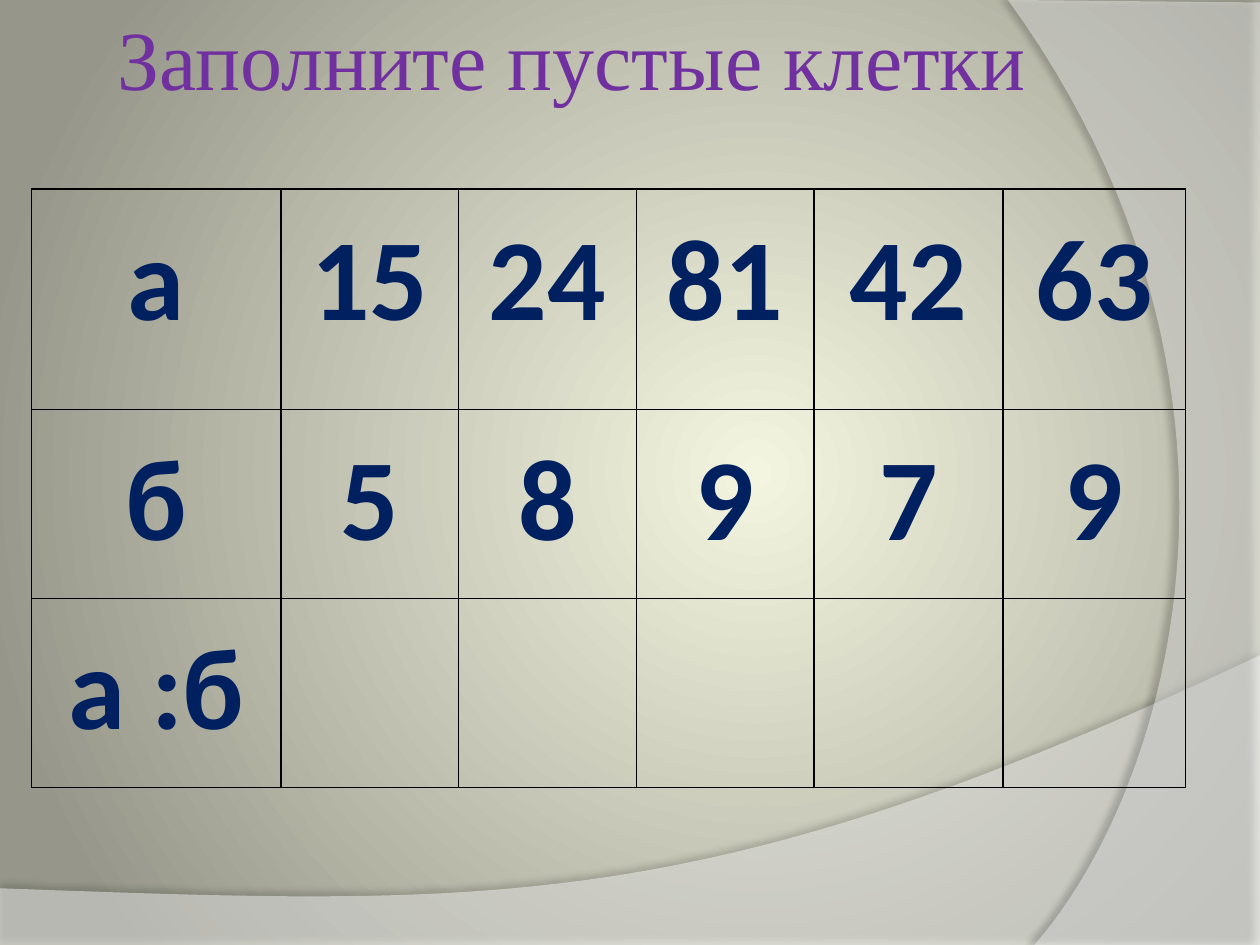
from dataclasses import dataclass

from lxml.etree import SubElement
from pptx import Presentation
from pptx.dml.color import RGBColor
from pptx.enum.text import MSO_ANCHOR, PP_ALIGN
from pptx.oxml.ns import qn
from pptx.util import Inches, Pt

# Lengths on the page are counted in grid units: 100 columns by 75 rows.
COLUMNS, ROWS = 100, 75
UNIT = Inches(10) / COLUMNS


def grid(*lengths):
    return [round(length * UNIT) for length in lengths]


def bezier(start, first, second, end, steps=48):
    """Return the points after start along a cubic curve."""
    points = []
    for step in range(1, steps + 1):
        t = step / steps
        weights = ((1 - t) ** 3, 3 * t * (1 - t) ** 2, 3 * t**2 * (1 - t), t**3)
        corners = (start, first, second, end)
        points.append(tuple(sum(w * corner[axis] for w, corner in zip(weights, corners))
                            for axis in (0, 1)))
    return points


def add_xml(parent, tag, **values):
    return SubElement(parent, qn(tag), {key: str(value) for key, value in values.items()})


def apply(target, formats):
    for name, value in formats.items():
        setattr(target, name, value)


@dataclass(frozen=True)
class Theme:
    glow: str = "F4F5E0"
    edge: str = "96978A"
    wave: str = "FFFFFF"
    ink: str = "000000"
    title: str = "7030A0"
    number: str = "002060"
    title_font: str = "Times New Roman"
    number_font: str = "Calibri"
    title_size: int = 48
    number_size: int = 66
    border: int = 1


class Page:
    """The style and the slide being filled."""

    def __init__(self, deck, theme):
        self.theme = theme
        self.slide = deck.slides.add_slide(deck.slide_layouts[5])

    def background(self):
        fill = self.slide.background.fill
        fill.gradient()
        stops = zip(fill.gradient_stops, (self.theme.glow, self.theme.edge), (0, 1))
        for stop, colour, position in stops:
            stop.color.rgb = RGBColor.from_string(colour)
            stop.position = position
        gradient = self.slide.element.find(".//" + qn("a:gradFill"))
        gradient.remove(gradient.find(qn("a:lin")))
        circle = add_xml(gradient, "a:path", path="circle")
        add_xml(circle, "a:fillToRect", l=60000, t=50000, r=40000, b=50000)

    def wave(self, points, opacity, shadow_opacity, distance, angle):
        start, *others = [grid(*point) for point in points]
        builder = self.slide.shapes.build_freeform(*start)
        builder.add_line_segments(others)
        shape = builder.convert_to_shape()
        shape.fill.solid()
        shape.fill.fore_color.rgb = RGBColor.from_string(self.theme.wave)
        shape.line.fill.background()
        shape.shadow.inherit = False
        properties = shape.element.spPr
        colour = properties.find(qn("a:solidFill")).find(qn("a:srgbClr"))
        add_xml(colour, "a:alpha", val=opacity * 1000)
        shadow = add_xml(properties.find(qn("a:effectLst")), "a:outerShdw", blurRad=Pt(4),
                         dist=Pt(distance), dir=angle * 60000, algn="ctr", rotWithShape=0)
        shadow_colour = add_xml(shadow, "a:srgbClr", val=self.theme.ink)
        add_xml(shadow_colour, "a:alpha", val=shadow_opacity * 1000)

    def add_text(self, frame, text, alignment, spacing, colour, **font):
        para = frame.paragraphs[0]
        apply(para, {"alignment": alignment, "line_spacing": spacing})
        span = para.add_run()
        span.text = text
        apply(span.font, font)
        span.font.color.rgb = RGBColor.from_string(colour)

    def title(self, text, *place):
        box = self.slide.shapes.title
        apply(box, dict(zip(("left", "top", "width", "height"), grid(*place))))
        apply(box.text_frame, {"vertical_anchor": MSO_ANCHOR.MIDDLE, "word_wrap": True})
        self.add_text(box.text_frame, text, PP_ALIGN.LEFT, 1.0, self.theme.title,
                      name=self.theme.title_font, size=Pt(self.theme.title_size))
        box.element.getparent().append(box.element)  # in front of the waves

    def border(self, cell):
        properties = cell._tc.get_or_add_tcPr()
        for side in ("a:lnL", "a:lnR", "a:lnT", "a:lnB"):
            line = add_xml(properties, side, w=Pt(self.theme.border))
            add_xml(add_xml(line, "a:solidFill"), "a:srgbClr", val=self.theme.ink)

    def table(self, values, left, top, widths, heights):
        place = grid(left, top, sum(widths), sum(heights))
        table = self.slide.shapes.add_table(len(heights), len(widths), *place).table
        apply(table, {"first_row": False, "horz_banding": False})
        for column, width in zip(table.columns, grid(*widths)):
            column.width = width
        for row, height, texts in zip(table.rows, grid(*heights), values):
            row.height = height
            for cell, text in zip(row.cells, texts):
                self.border(cell)
                cell.fill.background()
                apply(cell, {"margin_left": Inches(0.05), "margin_right": Inches(0.05),
                             "margin_top": 0, "margin_bottom": 0})
                if text:
                    self.add_text(cell.text_frame, text, PP_ALIGN.CENTER, 1.15,
                                  self.theme.number, name=self.theme.number_font,
                                  size=Pt(self.theme.number_size), bold=True)


def main():
    deck = Presentation()
    apply(deck, {"slide_width": grid(COLUMNS)[0], "slide_height": grid(ROWS)[0]})
    page = Page(deck, Theme())
    page.background()

    bottom_curve = bezier((100, 52), (55.9, 72.9), (39.1, 71.9), (0, 70.5))
    page.wave([(0, 70.5), (0, 75.1), (100, 75.1), (100, 52), *bottom_curve],
              opacity=45, shadow_opacity=35, distance=3.5, angle=270)
    right_curve = bezier((82.1, 75), (93.5, 61.9), (101.8, 30), (80, 0))
    page.wave([(100, 0.2), (100, 75), (82.1, 75), *right_curve, (100, 0.2)],
              opacity=40, shadow_opacity=45, distance=4, angle=180)

    page.title("Заполните пустые клетки", 8.3, 0, 84.2, 9.1)
    values = [
        ["а", "15", "24", "81", "42", "63"],
        ["б", "5", "8", "9", "7", "9"],
        ["а :б", "", "", "", "", ""],
    ]
    page.table(values, 2.5, 15, widths=[19.8, 14.1, 14.1, 14.1, 15, 14.5],
               heights=[17.5, 15, 15])
    deck.save("out.pptx")


if __name__ == "__main__":
    main()
